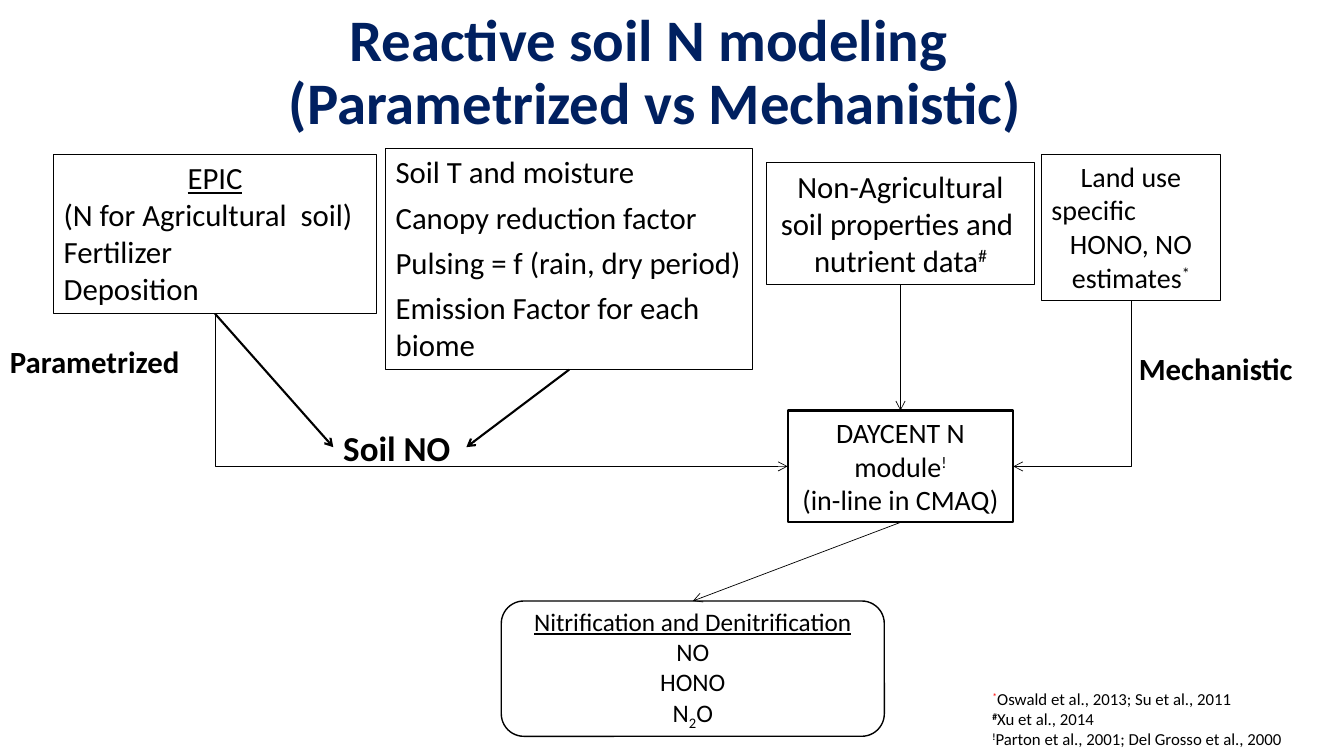
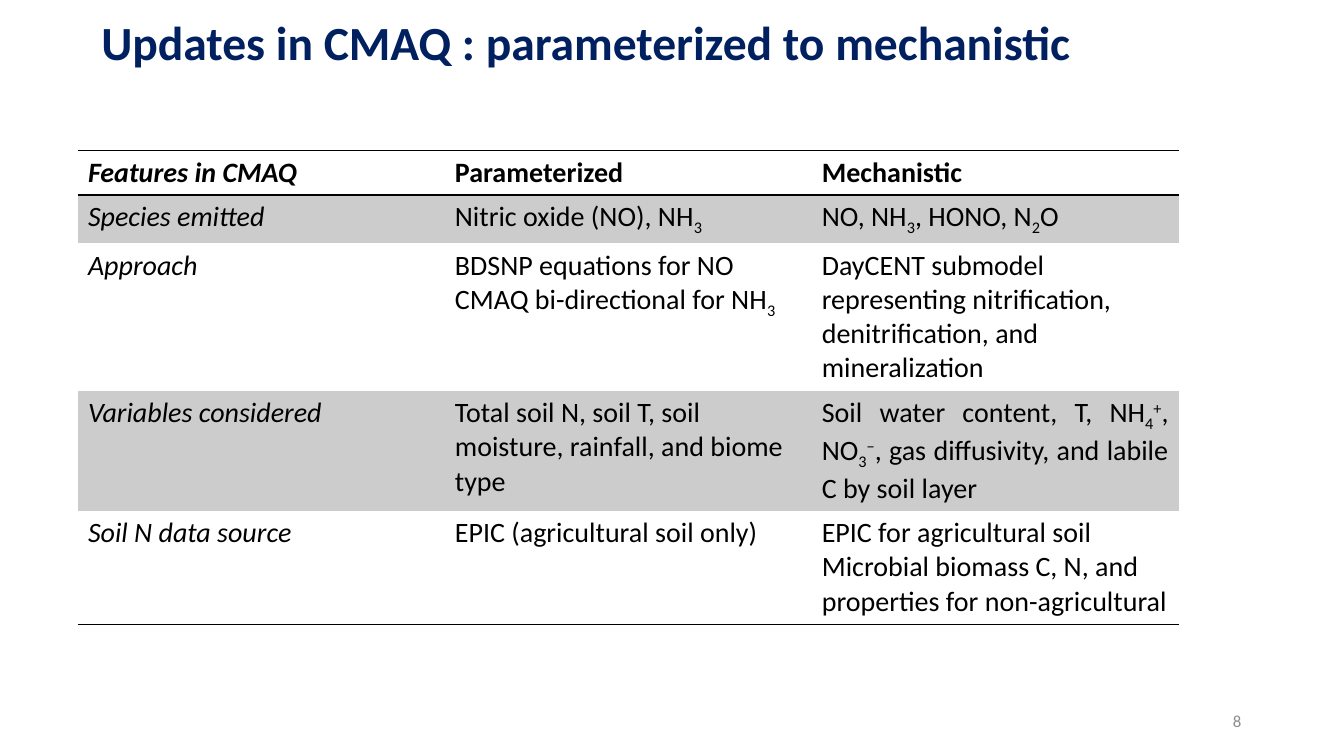
from lxml import etree
from pptx import Presentation
from pptx import util as u
from pptx.dml.color import RGBColor
from pptx.enum import shapes, text
from pptx.oxml import ns

# Shared look
FONT = "Calibri"
NAVY = RGBColor(0x00, 0x20, 0x60)
BLACK = RGBColor(0x00, 0x00, 0x00)
RED = RGBColor(0xFF, 0x00, 0x00)
GRAY = RGBColor(0x8C, 0x8C, 0x8C)
BAND = RGBColor(0xCC, 0xCC, 0xCC)
LEFT, CENTER, RIGHT, JUSTIFY = (
    text.PP_ALIGN.LEFT, text.PP_ALIGN.CENTER, text.PP_ALIGN.RIGHT, text.PP_ALIGN.JUSTIFY)
TOP, MIDDLE = text.MSO_ANCHOR.TOP, text.MSO_ANCHOR.MIDDLE
RECTANGLE = shapes.MSO_SHAPE.RECTANGLE
ROUNDED = shapes.MSO_SHAPE.ROUNDED_RECTANGLE

WIDTH, HEIGHT = u.Inches(13.333), u.Inches(7.5)
BASELINES = {"_": "-25000", "^": "30000"}
PLAIN_TABLE_STYLE = "{2D5ABB26-0587-4C30-8999-92F81FD0307C}"

# Connection sites of a rectangle
SITE_TOP, SITE_LEFT, SITE_BOTTOM, SITE_RIGHT = range(4)


def across(percent):
    return round(WIDTH * percent / 100)


def down(percent):
    return round(HEIGHT * percent / 100)


def area(left, top, width, height):
    """Turn shares of the slide, in percent, into lengths."""
    return across(left), down(top), across(width), down(height)


def add_runs(paragraph, line):
    """Split a line at bars; |_x| is a subscript and |^x| a superscript."""
    for index, part in enumerate(line.split("|")):
        if not part:
            continue
        run = paragraph.add_run()
        if index % 2:
            run.text = part[1:]
            run._r.get_or_add_rPr().set("baseline", BASELINES[part[0]])
        else:
            run.text = part


def write(frame, lines, size, color=BLACK, align=LEFT, bold=False, italic=False,
          before=0, spacing=1.0):
    frame.word_wrap = True
    for index, line in enumerate(lines):
        paragraph = frame.add_paragraph() if index else frame.paragraphs[0]
        add_runs(paragraph, line)
        paragraph.alignment = align
        paragraph.space_before = u.Pt(before)
        paragraph.line_spacing = spacing
        font = paragraph.font
        font.name, font.size = FONT, u.Pt(size)
        font.bold, font.italic = bold, italic
        font.color.rgb = color


def add_label(slide, place, lines, size, anchor=TOP, **style):
    label = slide.shapes.add_textbox(*area(*place))
    label.text_frame.vertical_anchor = anchor
    write(label.text_frame, lines, size, **style)
    return label


def add_title(slide, place, lines, size):
    add_label(slide, place, lines, size, MIDDLE, color=NAVY, align=CENTER,
              bold=True, spacing=0.9)


def add_box(slide, place, lines, size, line_width=0.75, kind=RECTANGLE, anchor=TOP,
            **style):
    box = slide.shapes.add_shape(kind, *area(*place))
    box.shadow.inherit = False
    box.fill.background()
    box.line.color.rgb = BLACK
    box.line.width = u.Pt(line_width)
    box.text_frame.vertical_anchor = anchor
    write(box.text_frame, lines, size, **style)
    return box


def add_link(slide, start, start_site, end, end_site, line_width=0.5, elbow=False):
    """Arrow from start to end; an elbow is drawn backwards, level part first."""
    kind = shapes.MSO_CONNECTOR.ELBOW if elbow else shapes.MSO_CONNECTOR.STRAIGHT
    link = slide.shapes.add_connector(kind, 0, 0, 0, 0)
    ends = [(start, start_site), (end, end_site)]
    if elbow:
        ends.reverse()
    link.begin_connect(*ends[0])
    link.end_connect(*ends[1])
    link.line.color.rgb = BLACK
    link.line.width = u.Pt(line_width)
    properties = link._element.spPr
    if elbow:
        properties.find(ns.qn("a:prstGeom")).set("prst", "bentConnector2")
    arrow_end = "a:headEnd" if elbow else "a:tailEnd"
    etree.SubElement(properties.find(ns.qn("a:ln")), ns.qn(arrow_end), type="arrow")
    etree.SubElement(properties, ns.qn("a:effectLst"))


def add_border(cell, side):
    line = etree.SubElement(cell._tc.get_or_add_tcPr(), ns.qn("a:ln" + side),
                            w=str(u.Pt(1)))
    fill = etree.SubElement(line, ns.qn("a:solidFill"))
    etree.SubElement(fill, ns.qn("a:srgbClr"), val=str(BLACK))


def add_feature_table(slide, left, top, column_width, row_heights, rows):
    columns = len(rows[0])
    place = area(left, top, column_width * columns, sum(row_heights))
    table = slide.shapes.add_table(len(rows), columns, *place).table
    table._tbl.tblPr.find(ns.qn("a:tableStyleId")).text = PLAIN_TABLE_STYLE
    table.horz_banding = False
    for column in table.columns:
        column.width = across(column_width)
    for row_index, (height, row) in enumerate(zip(row_heights, rows)):
        table.rows[row_index].height = down(height)
        header = row_index == 0
        for column_index, lines in enumerate(row):
            cell = table.cell(row_index, column_index)
            write(cell.text_frame, lines, 20, bold=header, italic=column_index == 0)
            if header:
                add_border(cell, "T")
            if header or row_index == len(rows) - 1:
                add_border(cell, "B")
            if row_index % 2:
                cell.fill.solid()
                cell.fill.fore_color.rgb = BAND
            else:
                cell.fill.background()
    return table


def build_model_slide(slide):
    add_title(slide, (5.6, 0.1, 86.3, 19.3),
              ["Reactive soil N modeling ", "(Parametrized vs Mechanistic)"], 42)

    # Inputs
    factors = add_box(slide, (28.7, 19.6, 27.3, 29.3), [
        "Soil T and moisture", "Canopy reduction factor",
        "Pulsing = f (rain, dry period)", "Emission Factor for each biome"], 22, before=6)
    epic = add_box(slide, (4, 20.4, 24, 21.1), [
        "EPIC", "(N for Agricultural  soil)", "Fertilizer", "Deposition"], 22)
    heading = epic.text_frame.paragraphs[0]
    heading.alignment = CENTER
    heading.font.underline = True
    soil_data = add_box(slide, (57, 21.5, 20, 16.1), [
        "Non-Agricultural soil properties and ", "nutrient data|^#|"], 22, align=CENTER)
    land_use = add_box(slide, (77.5, 20.4, 13.3, 19.3), [
        "Land use", "specific", "HONO, NO", "estimates|^*|"], 20, align=CENTER)
    land_use.text_frame.paragraphs[1].alignment = LEFT

    # Model and results
    soil_no = add_label(slide, (24.8, 55.7, 9.9, 6.9), ["Soil NO"], 25, bold=True)
    daycent = add_box(slide, (58.6, 54.3, 16.8, 14.8), [
        "DAYCENT N module|^!|", "(in-line in CMAQ)"], 20, line_width=1.5, align=CENTER)
    products = add_box(slide, (37.3, 79.5, 28.5, 17.9), [
        "Nitrification and Denitrification", "NO", "HONO", "N|_2|O"], 18,
        line_width=1, kind=ROUNDED, anchor=MIDDLE, align=CENTER)
    products.text_frame.paragraphs[0].font.underline = True

    # Names of the two approaches
    add_label(slide, (0, 44.7, 14.8, 6.3), ["Parametrized"], 22, bold=True)
    add_label(slide, (84, 45.6, 14.5, 6.3), ["Mechanistic"], 22, bold=True)

    # Arrows
    add_link(slide, epic, SITE_BOTTOM, soil_no, SITE_LEFT, 1.5)
    add_link(slide, factors, SITE_BOTTOM, soil_no, SITE_RIGHT, 1.5)
    add_link(slide, soil_data, SITE_BOTTOM, daycent, SITE_TOP)
    add_link(slide, land_use, SITE_BOTTOM, daycent, SITE_RIGHT, elbow=True)
    add_link(slide, epic, SITE_BOTTOM, daycent, SITE_LEFT, elbow=True)
    add_link(slide, daycent, SITE_BOTTOM, products, SITE_TOP)

    # References
    references = add_label(slide, (73.1, 90.4, 24.2, 9.6), [
        "|^*|Oswald et al., 2013; Su et al., 2011", "|^#|Xu et al., 2014",
        "|^!|Parton et al., 2001; Del Grosso et al., 2000"], 12)
    star, *other_marks = [
        paragraph.runs[0] for paragraph in references.text_frame.paragraphs]
    star.font.color.rgb = RED
    for mark in other_marks:
        mark.font.bold = True


def build_update_slide(slide):
    add_title(slide, (3.4, 0, 80.4, 12), ["Updates in CMAQ : parameterized to mechanistic"], 34)
    rows = [
        [["Features in CMAQ"], ["Parameterized"], ["Mechanistic"]],
        [["Species emitted"], ["Nitric oxide (NO), NH|_3|"],
         ["NO, NH|_3|, HONO, N|_2|O"]],
        [["Approach"],
         ["BDSNP equations for NO", "CMAQ bi-directional for NH|_3|"],
         ["DayCENT submodel representing nitrification, denitrification, and mineralization"]],
        [["Variables considered"],
         ["Total soil N, soil T, soil moisture, rainfall, and biome type"],
         ["Soil water content, T, NH|_4||^+|, NO|_3||^−|, gas diffusivity, "
          "and labile C by soil layer"]],
        [["Soil N data source"], ["EPIC (agricultural soil only)"],
         ["EPIC for agricultural soil",
          "Microbial biomass C, N, and properties for non-agricultural"]],
    ]
    table = add_feature_table(slide, 5.8, 19.9, 27.3, [5.9, 6.3, 19.5, 15.9, 15], rows)
    table.cell(3, 2).text_frame.paragraphs[0].alignment = JUSTIFY

    # Page number
    add_label(slide, (70.6, 92.7, 22.5, 5.3), ["8"], 12, MIDDLE, color=GRAY, align=RIGHT)


def main():
    presentation = Presentation()
    presentation.slide_width, presentation.slide_height = WIDTH, HEIGHT
    blank = presentation.slide_layouts[6]
    for build in (build_model_slide, build_update_slide):
        build(presentation.slides.add_slide(blank))
    presentation.save("out.pptx")


if __name__ == "__main__":
    main()
